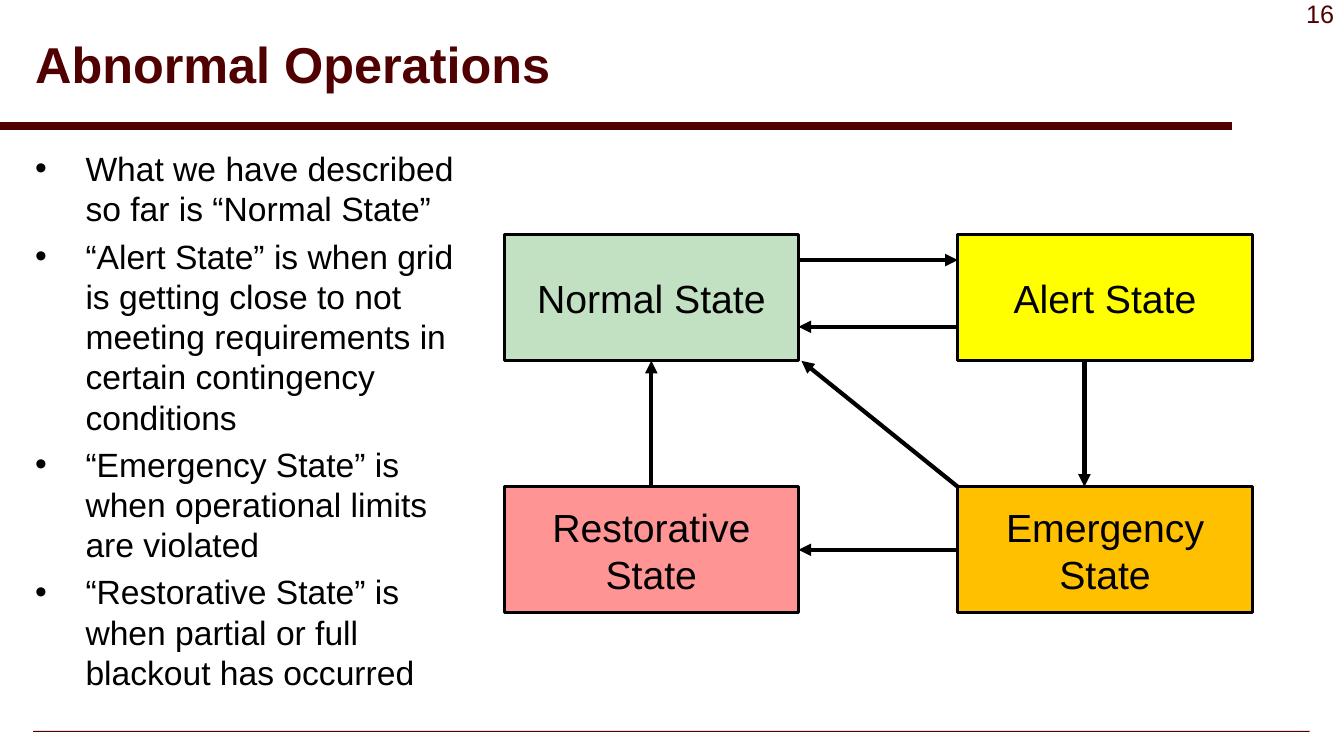
from lxml.etree import SubElement
from pptx import Presentation
from pptx.dml.color import RGBColor
from pptx.enum.shapes import MSO_CONNECTOR, MSO_SHAPE
from pptx.enum.text import MSO_ANCHOR, PP_ALIGN
from pptx.oxml.ns import qn
from pptx.util import Inches, Pt

MAROON = RGBColor(0x50, 0x00, 0x00)
BLACK = RGBColor(0x00, 0x00, 0x00)
GREEN = RGBColor(0xC2, 0xE0, 0xC2)
YELLOW = RGBColor(0xFF, 0xFF, 0x00)
ORANGE = RGBColor(0xFF, 0xC0, 0x00)
PINK = RGBColor(0xFF, 0x94, 0x94)

# Content
TITLE = "Abnormal Operations"
PAGE_NUMBER = "16"
POINTS = [
    "What we have described so far is “Normal State”",
    "“Alert State” is when grid is getting close to not meeting requirements "
    "in certain contingency conditions",
    "“Emergency State” is when operational limits are violated",
    "“Restorative State” is when partial or full blackout has occurred",
]
# State: column, row, colour
STATES = {
    "Normal State": (0, 0, GREEN),
    "Alert State": (1, 0, YELLOW),
    "Emergency State": (1, 1, ORANGE),
    "Restorative State": (0, 1, PINK),
}
# From state and point, to state and point; points are shares of the box's size
TRANSITIONS = [
    ("Normal State", (1, 0.2), "Alert State", (0, 0.2)),
    ("Alert State", (0, 0.73), "Normal State", (1, 0.73)),
    ("Emergency State", (0, 0.5), "Restorative State", (1, 0.5)),
    ("Restorative State", (0.5, 0), "Normal State", (0.5, 1)),
    ("Alert State", (0.43, 1), "Emergency State", (0.43, 0)),
    ("Emergency State", (0, 0), "Normal State", (1.01, 1)),
]

# Grid of states, in inches
GRID_LEFT, GRID_TOP = 5, 2.33
COLUMN_STEP, ROW_STEP = 4.5, 2.5
STATE_WIDTH, STATE_HEIGHT = 2.92, 1.25
SIDES = {(0.5, 0): 0, (0, 0.5): 1, (0.5, 1): 2, (1, 0.5): 3}

presentation = Presentation()
presentation.slide_width = Inches(13.33)
presentation.slide_height = Inches(7.5)
slide = presentation.slides.add_slide(presentation.slide_layouts[6])


def write(shape, *texts, size, color=BLACK, bold=False, align=PP_ALIGN.LEFT,
          anchor=MSO_ANCHOR.TOP, line_spacing=None, bullet=None):
    frame = shape.text_frame
    frame.word_wrap = True
    frame.vertical_anchor = anchor
    for index, text in enumerate(texts):
        paragraph = frame.paragraphs[0] if index == 0 else frame.add_paragraph()
        if bullet:
            properties = paragraph._p.get_or_add_pPr()
            properties.set("marL", str(Inches(0.5)))
            properties.set("indent", str(Inches(-0.5)))
            SubElement(properties, qn("a:buFont"), typeface="Arial")
            SubElement(properties, qn("a:buChar"), char=bullet)
        if index:
            paragraph.space_before = Pt(0.2 * size)
        if line_spacing:
            paragraph.line_spacing = line_spacing
        paragraph.alignment = align
        run = paragraph.add_run()
        run.text = text
        run.font.name = "Arial"
        run.font.size = Pt(size)
        run.font.bold = bold
        run.font.color.rgb = color


def text_box(left, top, width, height):
    return slide.shapes.add_textbox(*map(Inches, (left, top, width, height)))


def rectangle(left, top, width, height, color):
    box = slide.shapes.add_shape(
        MSO_SHAPE.RECTANGLE, *map(Inches, (left, top, width, height)))
    box.shadow.inherit = False
    box.fill.solid()
    box.fill.fore_color.rgb = color
    return box


def straight_line(start, end, color, width, arrow=False):
    line = slide.shapes.add_connector(
        MSO_CONNECTOR.STRAIGHT, *map(Inches, (*start, *end)))
    line.line.color.rgb = color
    line.line.width = Pt(width)
    if arrow:
        SubElement(line.line._get_or_add_ln(), qn("a:tailEnd"), type="triangle")
    SubElement(line._element.spPr, qn("a:effectLst"))
    return line


def point_on(state, share):
    column, row, _ = STATES[state]
    return (GRID_LEFT + column * COLUMN_STEP + share[0] * STATE_WIDTH,
            GRID_TOP + row * ROW_STEP + share[1] * STATE_HEIGHT)


# Rules, page number and title
footer_rule = rectangle(0.33, 7.25, 12.66, 0.01, MAROON)
footer_rule.line.fill.background()
straight_line((0, 1.25), (12.22, 1.25), MAROON, 6)
write(text_box(12.13, -0.07, 1.2, 0.4), PAGE_NUMBER,
      size=18, color=MAROON, align=PP_ALIGN.RIGHT)
write(text_box(0.25, 0.08, 11.92, 1.17), TITLE, size=36, color=MAROON,
      bold=True, anchor=MSO_ANCHOR.MIDDLE, line_spacing=0.9)

# Bulleted points
write(text_box(0.25, 1.42, 4.54, 5.67), *POINTS, size=24, bullet="•")

# States
state_boxes = {}
for state, (_, _, color) in STATES.items():
    state_box = rectangle(*point_on(state, (0, 0)), STATE_WIDTH, STATE_HEIGHT, color)
    state_box.line.color.rgb = BLACK
    state_box.line.width = Pt(2)
    write(state_box, state, size=28, align=PP_ALIGN.CENTER, anchor=MSO_ANCHOR.MIDDLE)
    state_boxes[state] = state_box

# Transitions
for source, leave, target, enter in TRANSITIONS:
    transition = straight_line(point_on(source, leave), point_on(target, enter),
                               BLACK, 3, arrow=True)
    if leave in SIDES:
        transition.begin_connect(state_boxes[source], SIDES[leave])
    if enter in SIDES:
        transition.end_connect(state_boxes[target], SIDES[enter])

presentation.save("out.pptx")
